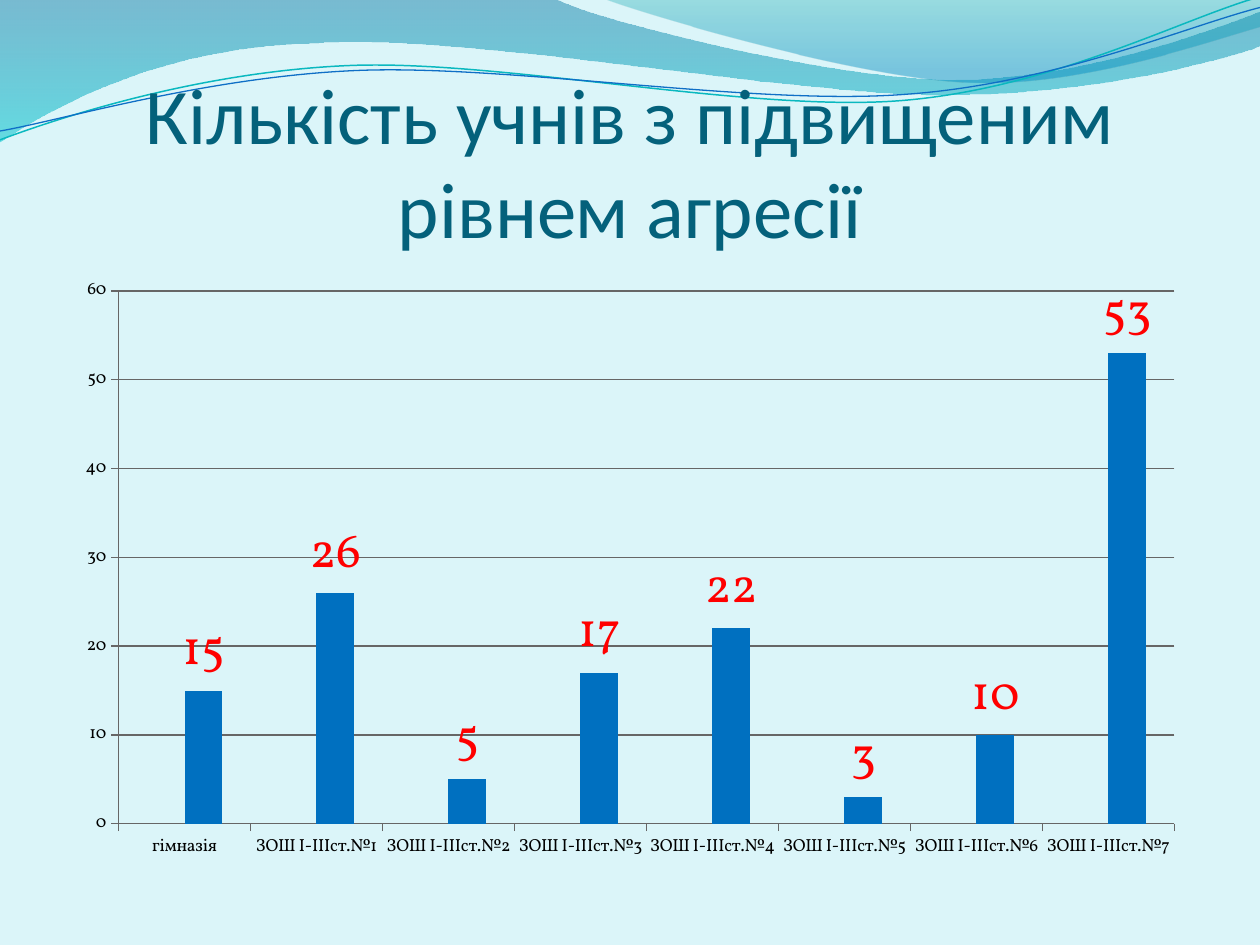
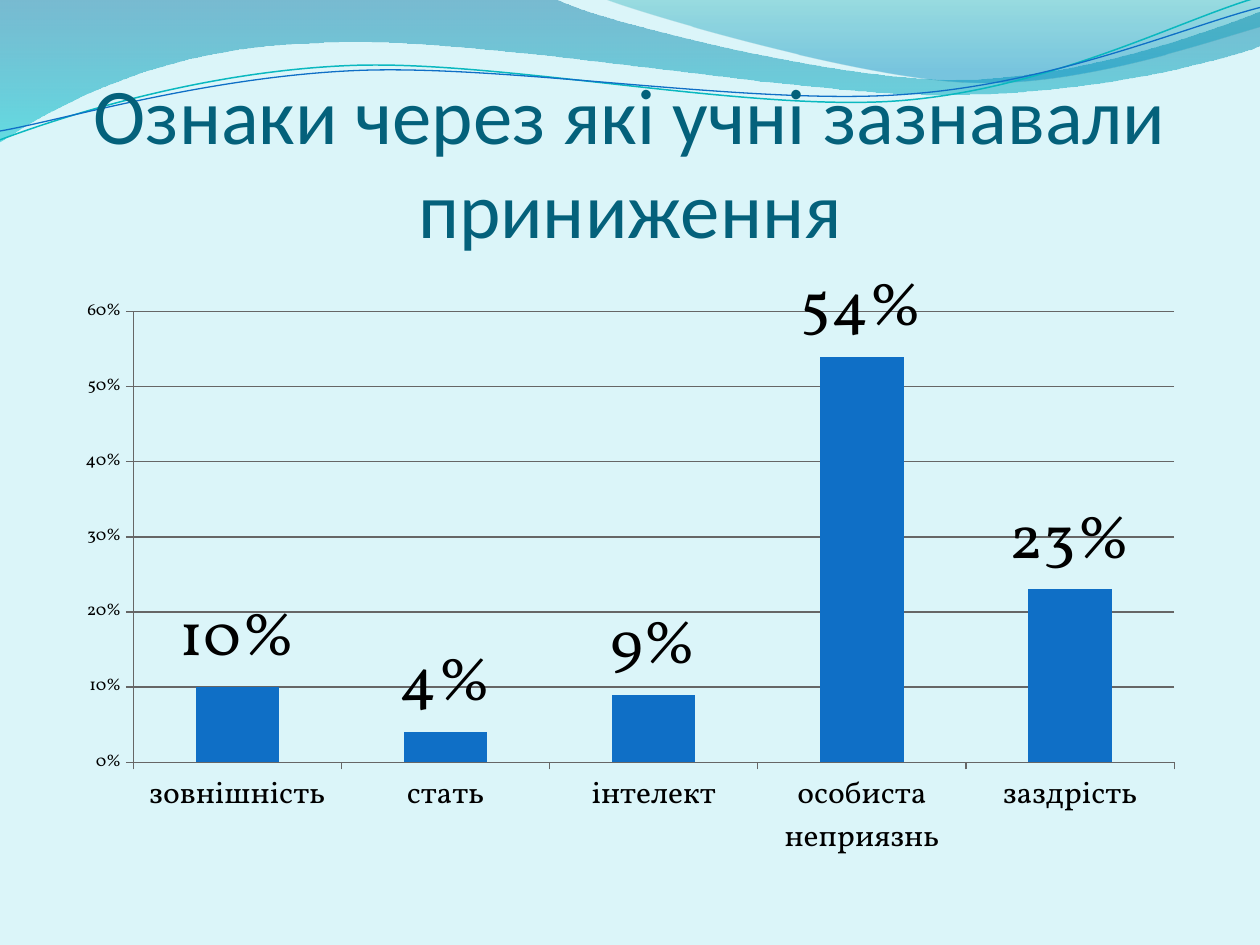
import math

from lxml import etree
from pptx import Presentation, util as u
from pptx.chart.data import CategoryChartData
from pptx.dml.color import RGBColor
from pptx.enum import chart as ch, text
from pptx.oxml.ns import qn

COLORS = {
    "background": "DBF5F9", "title": "04617B", "text": "000000", "grid": "666666",
    "accent": "0F6FC6", "bar": "0070C0", "highlight": "FF0000", "teal": "0AB8BF",
    "wave_top": "0074A1", "wave_bottom": "00C6CF",
    "crest_top": "00A1A9", "crest_bottom": "008BBF",
}
RGB = {name: RGBColor.from_string(value) for name, value in COLORS.items()}

prs = Presentation()
prs.slide_width, prs.slide_height = u.Inches(10), u.Inches(7.5)
WIDTH, HEIGHT = prs.slide_width, prs.slide_height
MARGIN = int(WIDTH * 0.05)
CONTENT_WIDTH = WIDTH - 2 * MARGIN
TITLE_TOP, TITLE_HEIGHT = u.Inches(0.77), u.Inches(1.25)
CHART_TOP, CHART_HEIGHT = u.Inches(2.12), int(HEIGHT * 0.64)
RIPPLE_TILT = -2.7

# Outlines in inches: a pair is a straight step, six numbers are a Bezier curve.
# Bands: outline, then gradient stops as (colour, position, opacity).
BANDS = [
    ([(0, 0), (4.4, -0.01), (4.76, 0.17, 6.64, 0.63, 7.58, 0.63),
      (8.53, 0.63, 9.58, 0.26, 10, 0.09), (10.01, 0.36),
      (9.83, 0.44, 8.7, 0.76, 7.46, 0.75), (6.22, 0.75, 3.82, 0.28, 2.57, 0.34),
      (1.29, 0.36, 0.46, 0.83, -0.01, 1.13), (0, 0)],
     [("wave_top", 0, 45), ("wave_bottom", 1, 55)]),
    ([(4.79, -0.01), (5.09, 0.11, 6.82, 0.62, 7.69, 0.65),
      (8.56, 0.69, 9.61, 0.32, 10, 0.21), (10, 0), (4.79, -0.01)],
     [("crest_top", 0, 30), ("crest_bottom", 0.8, 45)]),
]
# Ripples: outline as seen, centre of the tilt, colour, line width in points.
RIPPLES = [
    ([(0, 1.11), (0.48, 0.93, 1.58, 0.57, 2.77, 0.52),
      (3.95, 0.47, 5.93, 0.89, 7.13, 0.8), (8.33, 0.71, 9.38, 0.15, 9.98, -0.02)],
     (4.99, 0.58), "teal", 0.85),
    ([(0, 1.04), (0.47, 0.96, 1.64, 0.61, 2.83, 0.56),
      (4.03, 0.51, 5.97, 0.84, 7.17, 0.75), (8.36, 0.67, 9.41, 0.21, 10, 0.06)],
     (5, 0.59), "accent", 0.75),
]

SLIDES = [
    {"title": "Кількість учнів з підвищеним рівнем агресії",
     "categories": ["гімназія"] + [f"ЗОШ І-ІІІст.№{n}" for n in range(1, 8)],
     "series": [[None] * 8, [15, 26, 5, 17, 22, 3, 10, 53]],
     "bars": ["accent", "bar"], "format": "General",
     "category_size": 10, "label_size": 28, "label_color": "highlight",
     "step": 10},
    {"title": "Ознаки через які учні зазнавали приниження",
     "categories": ["зовнішність", "стать", "інтелект", "особиста неприязнь", "заздрість"],
     "series": [[0.1, 0.04, 0.09, 0.54, 0.23]],
     "bars": ["accent"], "format": "0%",
     "category_size": 18, "label_size": 36, "label_color": "text",
     "step": 0.1},
]


def turn_back(segment, center):
    """Undo the ripple tilt for every x, y pair of a segment."""
    angle = math.radians(-RIPPLE_TILT)
    cos, sin = math.cos(angle), math.sin(angle)
    turned = []
    for x, y in zip(segment[::2], segment[1::2]):
        dx, dy = x - center[0], y - center[1]
        turned += [center[0] + dx * cos - dy * sin, center[1] + dx * sin + dy * cos]
    return turned


def draw_outline(slide, segments, close):
    """Add a freeform; each six-number segment becomes one Bezier curve."""
    points = [(u.Inches(x), u.Inches(y)) for segment in segments
              for x, y in zip(segment[::2], segment[1::2])]
    builder = slide.shapes.build_freeform(*points[0])
    builder.add_line_segments(points[1:], close=close)
    outline = builder.convert_to_shape()
    outline.shadow.inherit = False
    steps = iter(list(outline._element.iter(qn("a:lnTo"))))
    for segment in segments[1:]:
        first = next(steps)
        if len(segment) == 6:
            curve = etree.Element(qn("a:cubicBezTo"))
            first.addprevious(curve)
            for step in (first, next(steps), next(steps)):
                curve.append(step[0])
                step.getparent().remove(step)
    return outline


for content in SLIDES:
    slide = prs.slides.add_slide(prs.slide_layouts[6])
    slide.background.fill.solid()
    slide.background.fill.fore_color.rgb = RGB["background"]

    # Waves along the top
    for segments, stops in BANDS:
        band = draw_outline(slide, segments, close=True)
        band.line.fill.background()
        band.fill.gradient()
        band.fill.gradient_angle = 270
        for stop, (color, position, _) in zip(band.fill.gradient_stops, stops):
            stop.color.rgb = RGB[color]
            stop.position = position
        tints = list(band._element.spPr.iter(qn("a:srgbClr")))
        for tint, (_, _, opacity) in zip(tints, stops):
            etree.SubElement(tint, qn("a:alpha")).set("val", str(opacity * 1000))
    for segments, center, color, width in RIPPLES:
        level = [turn_back(segment, center) for segment in segments]
        ripple = draw_outline(slide, level, close=False)
        ripple.rotation = RIPPLE_TILT
        ripple.fill.background()
        ripple.line.color.rgb = RGB[color]
        ripple.line.width = u.Pt(width)

    # Title
    title = slide.shapes.add_textbox(MARGIN, TITLE_TOP, CONTENT_WIDTH, TITLE_HEIGHT).text_frame
    title.word_wrap = True
    title.vertical_anchor = text.MSO_ANCHOR.BOTTOM
    title.margin_left = title.margin_right = title.margin_bottom = 0
    title.margin_top = u.Inches(0.05)
    heading = title.paragraphs[0]
    heading.text = content["title"]
    heading.alignment = text.PP_ALIGN.CENTER
    heading.font.name, heading.font.size = "Calibri", u.Pt(45)
    heading.font.color.rgb = RGB["title"]

    # Column chart
    data = CategoryChartData(number_format=content["format"])
    data.categories = content["categories"]
    for number, values in enumerate(content["series"], 1):
        data.add_series(f"Series {number}", values)
    chart = slide.shapes.add_chart(ch.XL_CHART_TYPE.COLUMN_CLUSTERED, MARGIN, CHART_TOP,
                                   CONTENT_WIDTH, CHART_HEIGHT, data).chart
    chart.has_legend = chart.has_title = False
    chart.font.name, chart.font.size = "Vollkorn", u.Pt(10)
    chart.font.color.rgb = RGB["text"]

    columns = chart.plots[0]
    columns.gap_width, columns.overlap = 150, 0
    columns.vary_by_categories = False
    for series, color in zip(columns.series, content["bars"]):
        series.invert_if_negative = False
        series.format.fill.solid()
        series.format.fill.fore_color.rgb = RGB[color]
    labels = columns.series[-1].data_labels
    labels.show_value = True
    labels.position = ch.XL_LABEL_POSITION.OUTSIDE_END
    labels.number_format, labels.number_format_is_linked = content["format"], False
    labels.font.name, labels.font.size = "Vollkorn", u.Pt(content["label_size"])
    labels.font.color.rgb = RGB[content["label_color"]]

    scale = chart.value_axis
    scale.minimum_scale, scale.maximum_scale = 0, 6 * content["step"]
    scale.major_unit = content["step"]
    scale.tick_labels.number_format = content["format"]
    scale.tick_labels.number_format_is_linked = False
    scale.has_major_gridlines = True
    for axis in (scale, chart.category_axis):
        axis.major_tick_mark = ch.XL_TICK_MARK.OUTSIDE
    for rule in (scale, chart.category_axis, scale.major_gridlines):
        rule.format.line.color.rgb = RGB["grid"]
        rule.format.line.width = u.Pt(0.75)
    chart.category_axis.tick_labels.font.size = u.Pt(content["category_size"])

prs.save("out.pptx")
